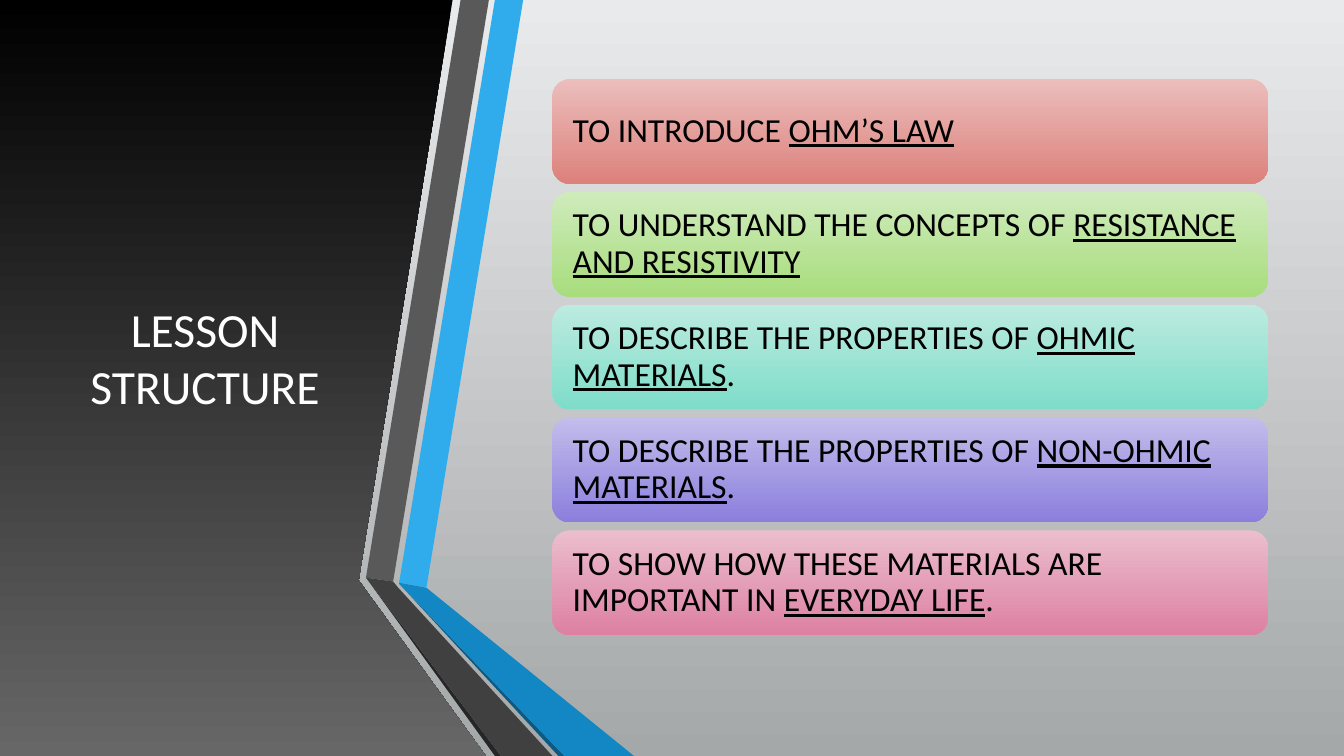
from pptx import Presentation
from pptx.dml.color import RGBColor
from pptx.enum.shapes import MSO_SHAPE
from pptx.enum.text import MSO_ANCHOR, MSO_AUTO_SIZE, PP_ALIGN
from pptx.util import Pt

BLACK = RGBColor(0x00, 0x00, 0x00)
WHITE = RGBColor(0xFF, 0xFF, 0xFF)
ASH = RGBColor(0x67, 0x67, 0x67)
MIST = RGBColor(0xE9, 0xEA, 0xEB)
STEEL = RGBColor(0xA5, 0xA8, 0xA9)
BLUE = RGBColor(0x30, 0xAC, 0xEC)
DEEP_BLUE = RGBColor(0x12, 0x87, 0xC3)
DARK_BLUE = RGBColor(0x0C, 0x5A, 0x82)
GRAY = RGBColor(0x59, 0x59, 0x59)
DEEP_GRAY = RGBColor(0x40, 0x40, 0x40)
DARK_GRAY = RGBColor(0x26, 0x26, 0x26)
PALE_RED, RED = RGBColor(0xEB, 0xBE, 0xBC), RGBColor(0xDD, 0x81, 0x7C)
PALE_GREEN, GREEN = RGBColor(0xCF, 0xEB, 0xBC), RGBColor(0xA8, 0xDD, 0x7D)
PALE_TEAL, TEAL = RGBColor(0xBD, 0xEB, 0xE0), RGBColor(0x7E, 0xDD, 0xC9)
PALE_VIOLET, VIOLET = RGBColor(0xC2, 0xBD, 0xEB), RGBColor(0x8B, 0x7F, 0xDD)
PALE_PINK, PINK = RGBColor(0xEB, 0xBE, 0xCD), RGBColor(0xDD, 0x80, 0xA2)

PANEL = [(0, 0), (323.3, 0), (256.3, 414), (256.3, 414.7), (347, 540), (0, 540)]
BANDS = [
    (BLUE, [(285.1, 416.2), (304.6, 419.8), (373.7, 0), (353.5, 0)]),
    (GRAY, [(349.2, 0), (329, 0), (261.4, 412.6), (280.8, 415.4)]),
    (DARK_GRAY, [(261.4, 412.6), (353.5, 540), (357.8, 540)]),
    (DARK_BLUE, [(285.1, 416.9), (398.9, 540), (403.2, 540)]),
    (DEEP_BLUE, [(285.1, 416.9), (403.2, 540), (452.9, 540),
                 (304.6, 419.8), (285.1, 416.2)]),
    (DEEP_GRAY, [(394.6, 540), (284.4, 419.8), (280.8, 415.4),
                 (261.4, 412.6), (357.8, 540)]),
]
GOALS = [
    (PALE_RED, RED, "TO INTRODUCE ", "OHM’S LAW", ""),
    (PALE_GREEN, GREEN, "TO UNDERSTAND THE CONCEPTS OF ",
     "RESISTANCE AND RESISTIVITY", ""),
    (PALE_TEAL, TEAL, "TO DESCRIBE THE PROPERTIES OF ", "OHMIC MATERIALS", "."),
    (PALE_VIOLET, VIOLET, "TO DESCRIBE THE PROPERTIES OF ",
     "NON-OHMIC MATERIALS", "."),
    (PALE_PINK, PINK, "TO SHOW HOW THESE MATERIALS ARE IMPORTANT IN ",
     "EVERYDAY LIFE", "."),
]
LEFT, TOP, WIDTH, HEIGHT, PITCH = 394.6, 56.4, 511.2, 74.9, 80.6


def shade(fill, top, bottom):
    """Fill with a vertical gradient."""
    fill.gradient()
    fill.gradient_angle = 270
    for stop, color in zip(fill.gradient_stops, (top, bottom)):
        stop.color.rgb = color


def write(shape, *parts, size, color, align, spacing=1.0, inset=7.2):
    """Write text parts in one paragraph, underlining every second part."""
    frame = shape.text_frame
    frame.word_wrap = True
    frame.auto_size = MSO_AUTO_SIZE.NONE
    frame.vertical_anchor = MSO_ANCHOR.MIDDLE
    frame.margin_left = frame.margin_right = Pt(inset)
    para = frame.paragraphs[0]
    para.alignment = align
    para.line_spacing = spacing
    for index, part in enumerate(parts):
        if not part:
            continue
        for row, line in enumerate(part.split("\n")):
            if row:
                para.add_line_break()
            run = para.add_run()
            run.text = line
            font = run.font
            font.name, font.size = "Calibri", Pt(size)
            font.color.rgb = color
            font.underline = index % 2 == 1


def outline(slide, points):
    """Add a closed polygon without line or shadow."""
    start, *rest = [(Pt(x), Pt(y)) for x, y in points]
    pen = slide.shapes.build_freeform(*start)
    pen.add_line_segments(rest, close=True)
    shape = pen.convert_to_shape()
    shape.shadow.inherit = False
    shape.line.fill.background()
    return shape


def add_band(slide, color, points):
    """Add one plain piece of the folded ribbons."""
    fill = outline(slide, points).fill
    fill.solid()
    fill.fore_color.rgb = color


def add_goal(slide, row, pale, strong, *parts):
    """Add one rounded goal bar."""
    bar = slide.shapes.add_shape(
        MSO_SHAPE.ROUNDED_RECTANGLE,
        Pt(LEFT), Pt(TOP + row * PITCH), Pt(WIDTH), Pt(HEIGHT))
    bar.shadow.inherit = False
    bar.line.fill.background()
    shade(bar.fill, pale, strong)
    write(bar, *parts, size=24, color=BLACK, align=PP_ALIGN.LEFT,
          spacing=0.9, inset=10.8)


def add_title(slide, text):
    """Place and format the title."""
    title = slide.shapes.title
    title.left, title.top = Pt(42.5), Pt(54)
    title.width, title.height = Pt(208), Pt(402)
    write(title, text, size=34, color=WHITE, align=PP_ALIGN.CENTER)


def main():
    """Build and save the slide."""
    deck = Presentation()
    deck.slide_width, deck.slide_height = Pt(960), Pt(540)
    slide = deck.slides.add_slide(deck.slide_layouts[5])
    shade(slide.background.fill, MIST, STEEL)
    shade(outline(slide, PANEL).fill, BLACK, ASH)
    for color, points in BANDS:
        add_band(slide, color, points)
    add_title(slide, "LESSON\nSTRUCTURE")
    for row, goal in enumerate(GOALS):
        add_goal(slide, row, *goal)
    title = slide.shapes.title._element
    title.getparent().append(title)
    deck.save("out.pptx")


if __name__ == "__main__":
    main()
